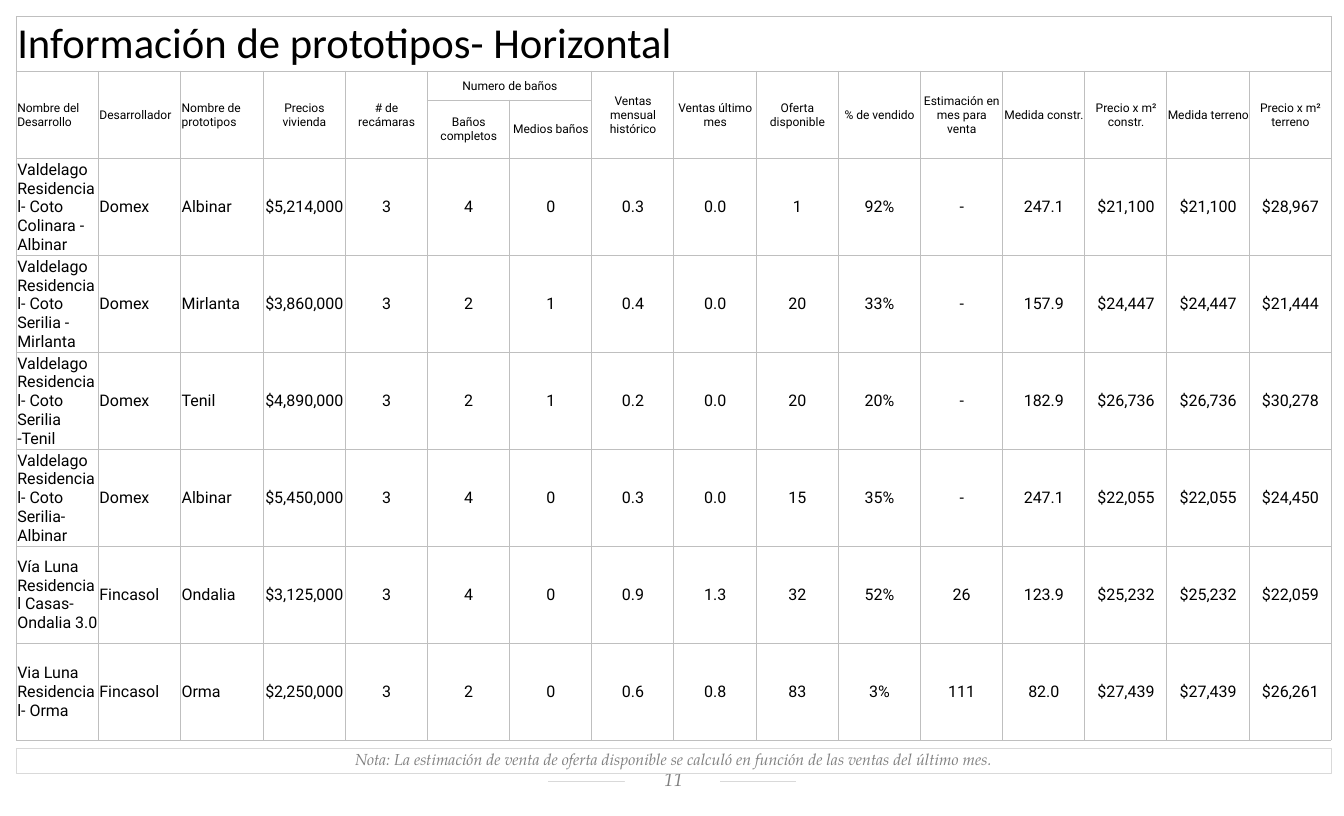
import lxml.etree
import pptx
import pptx.dml.color
import pptx.enum.shapes
import pptx.enum.text
import pptx.oxml.ns
import pptx.util

Inches, Pt = pptx.util.Inches, pptx.util.Pt
RGBColor = pptx.dml.color.RGBColor
ALIGN = pptx.enum.text.PP_ALIGN
MIDDLE = pptx.enum.text.MSO_ANCHOR.MIDDLE
qn = pptx.oxml.ns.qn

BLACK = RGBColor(0x00, 0x00, 0x00)
WHITE = RGBColor(0xFF, 0xFF, 0xFF)
GREY_TEXT = RGBColor(0x80, 0x80, 0x80)
GREY_RULE = RGBColor(0xD9, 0xD9, 0xD9)
GREY_BORDER = RGBColor(0xBF, 0xBF, 0xBF)

TITLE_FONT = {"name": "Calibri", "size": Pt(32)}
HEADER_FONT = {"name": "Roboto", "size": Pt(9)}
BODY_FONT = {"name": "Roboto", "size": Pt(12)}
PAGE_FONT = {"name": "TeX Gyre Pagella", "size": Pt(14), "italic": True}
NOTE_FONT = {"name": "TeX Gyre Pagella", "size": Pt(12), "italic": True}
CELL_FORMAT = {
    "margin_left": Inches(0.01), "margin_right": 0,
    "margin_top": Inches(0.01), "margin_bottom": 0,
    "vertical_anchor": MIDDLE,
}
PAGE_FORMAT = {
    "margin_left": Inches(0.12), "margin_right": Inches(0.1),
    "margin_top": Inches(0.02), "margin_bottom": Inches(0.05),
    "vertical_anchor": MIDDLE, "word_wrap": True,
}
NOTE_FORMAT = {
    "margin_left": Inches(0.1), "margin_right": Inches(0.1),
    "margin_top": Inches(0.05), "margin_bottom": Inches(0.05),
    "vertical_anchor": pptx.enum.text.MSO_ANCHOR.TOP, "word_wrap": True,
}

TITLE = "Información de prototipos- Horizontal"
BATHROOMS = "Numero de baños"
BATHROOM_COLUMNS = (5, 6)
LEFT_ALIGNED_COLUMNS = 3
HEADERS = [
    "Nombre del Desarrollo", "Desarrollador", "Nombre de prototipos",
    "Precios vivienda", "# de recámaras", "Baños completos", "Medios baños",
    "Ventas mensual histórico", "Ventas último mes", "Oferta disponible",
    "% de vendido", "Estimación en mes para venta", "Medida constr.",
    "Precio x m² constr.", "Medida terreno", "Precio x m² terreno",
]
HOMES = [
    ["Valdelago Residencial- Coto Colinara - Albinar", "Domex", "Albinar", "$5,214,000", "3", "4", "0",
     "0.3", "0.0", "1", "92%", "-", "247.1", "$21,100", "$21,100", "$28,967"],
    ["Valdelago Residencial- Coto Serilia - Mirlanta", "Domex", "Mirlanta", "$3,860,000", "3", "2", "1",
     "0.4", "0.0", "20", "33%", "-", "157.9", "$24,447", "$24,447", "$21,444"],
    ["Valdelago Residencial- Coto Serilia -Tenil", "Domex", "Tenil", "$4,890,000", "3", "2", "1",
     "0.2", "0.0", "20", "20%", "-", "182.9", "$26,736", "$26,736", "$30,278"],
    ["Valdelago Residencial- Coto Serilia- Albinar", "Domex", "Albinar", "$5,450,000", "3", "4", "0",
     "0.3", "0.0", "15", "35%", "-", "247.1", "$22,055", "$22,055", "$24,450"],
    ["Vía Luna Residencial Casas- Ondalia 3.0", "Fincasol", "Ondalia", "$3,125,000", "3", "4", "0",
     "0.9", "1.3", "32", "52%", "26", "123.9", "$25,232", "$25,232", "$22,059"],
    ["Via Luna Residencial- Orma", "Fincasol", "Orma", "$2,250,000", "3", "2", "0",
     "0.6", "0.8", "83", "3%", "111", "82.0", "$27,439", "$27,439", "$26,261"],
]
NOTE = "Nota: La estimación de venta de oferta disponible se calculó en función de las ventas del último mes."


def write(text_frame, text, font_format, color, alignment):
    paragraph = text_frame.paragraphs[0]
    paragraph.alignment = alignment
    run = paragraph.add_run()
    run.text = text
    for attribute, value in font_format.items():
        setattr(run.font, attribute, value)
    run.font.color.rgb = color
    return paragraph


def add_borders(cell):
    """Draw the four thin borders; they must come before the fill in tcPr."""
    properties = cell._tc.get_or_add_tcPr()
    for position, side in enumerate(("lnL", "lnR", "lnT", "lnB")):
        border = lxml.etree.Element(qn("a:" + side), w=str(Pt(0.5)))
        fill = lxml.etree.SubElement(border, qn("a:solidFill"))
        lxml.etree.SubElement(fill, qn("a:srgbClr"), val=str(GREY_BORDER))
        properties.insert(position, border)


presentation = pptx.Presentation()
presentation.slide_width = Inches(14)
presentation.slide_height = Inches(8.5)
slide = presentation.slides.add_slide(presentation.slide_layouts[6])

# Page number on its rule
page_rule = slide.shapes.add_connector(
    pptx.enum.shapes.MSO_CONNECTOR.STRAIGHT,
    Inches(5.71), Inches(8.14), Inches(8.29), Inches(8.14))
page_rule.line.color.rgb = GREY_RULE
page_rule.line.width = Pt(0.75)
lxml.etree.SubElement(page_rule._element.spPr, qn("a:effectLst"))

page_number = slide.shapes.add_shape(
    pptx.enum.shapes.MSO_SHAPE.RECTANGLE,
    Inches(6.51), Inches(7.98), Inches(0.99), Inches(0.29))
page_number.shadow.inherit = False
page_number.fill.solid()
page_number.fill.fore_color.rgb = WHITE
page_number.line.fill.background()
for attribute, value in PAGE_FORMAT.items():
    setattr(page_number.text_frame, attribute, value)
write(page_number.text_frame, "11", PAGE_FONT, GREY_TEXT, ALIGN.CENTER)

# Table of homes
row_heights = [0.57, 0.3, 0.61] + [1.01] * len(HOMES)
table = slide.shapes.add_table(
    len(row_heights), len(HEADERS),
    Inches(0.17), Inches(0.17), Inches(13.7), Inches(sum(row_heights))).table
table.first_row = False
table.horz_banding = False
for row, height in zip(table.rows, row_heights):
    row.height = Inches(height)
for column in table.columns:
    column.width = Inches(13.7 / len(HEADERS))
for cell in table.iter_cells():
    for attribute, value in CELL_FORMAT.items():
        setattr(cell, attribute, value)
    cell.fill.background()
    add_borders(cell)

table.cell(0, 0).merge(table.cell(0, len(HEADERS) - 1))
write(table.cell(0, 0).text_frame, TITLE, TITLE_FONT, BLACK, ALIGN.LEFT)
first_bathroom, last_bathroom = BATHROOM_COLUMNS
table.cell(1, first_bathroom).merge(table.cell(1, last_bathroom))
write(table.cell(1, first_bathroom).text_frame, BATHROOMS, HEADER_FONT, BLACK, ALIGN.CENTER)

for column, header in enumerate(HEADERS):
    alignment = ALIGN.LEFT if column < LEFT_ALIGNED_COLUMNS else ALIGN.CENTER
    header_row = 2 if column in BATHROOM_COLUMNS else 1
    if header_row == 1:
        table.cell(1, column).merge(table.cell(2, column))
    write(table.cell(header_row, column).text_frame, header, HEADER_FONT, BLACK, alignment)
    for row, home in enumerate(HOMES, start=3):
        write(table.cell(row, column).text_frame, home[column], BODY_FONT, BLACK, alignment)

# Note under the table
note = slide.shapes.add_shape(
    pptx.enum.shapes.MSO_SHAPE.RECTANGLE,
    Inches(0.17), Inches(7.8), Inches(13.7), Inches(0.26))
note.shadow.inherit = False
note.fill.background()
note.line.color.rgb = GREY_RULE
note.line.width = Pt(0.75)
for attribute, value in NOTE_FORMAT.items():
    setattr(note.text_frame, attribute, value)
write(note.text_frame, NOTE, NOTE_FONT, GREY_TEXT, ALIGN.CENTER).line_spacing = 0.8

presentation.save("out.pptx")
